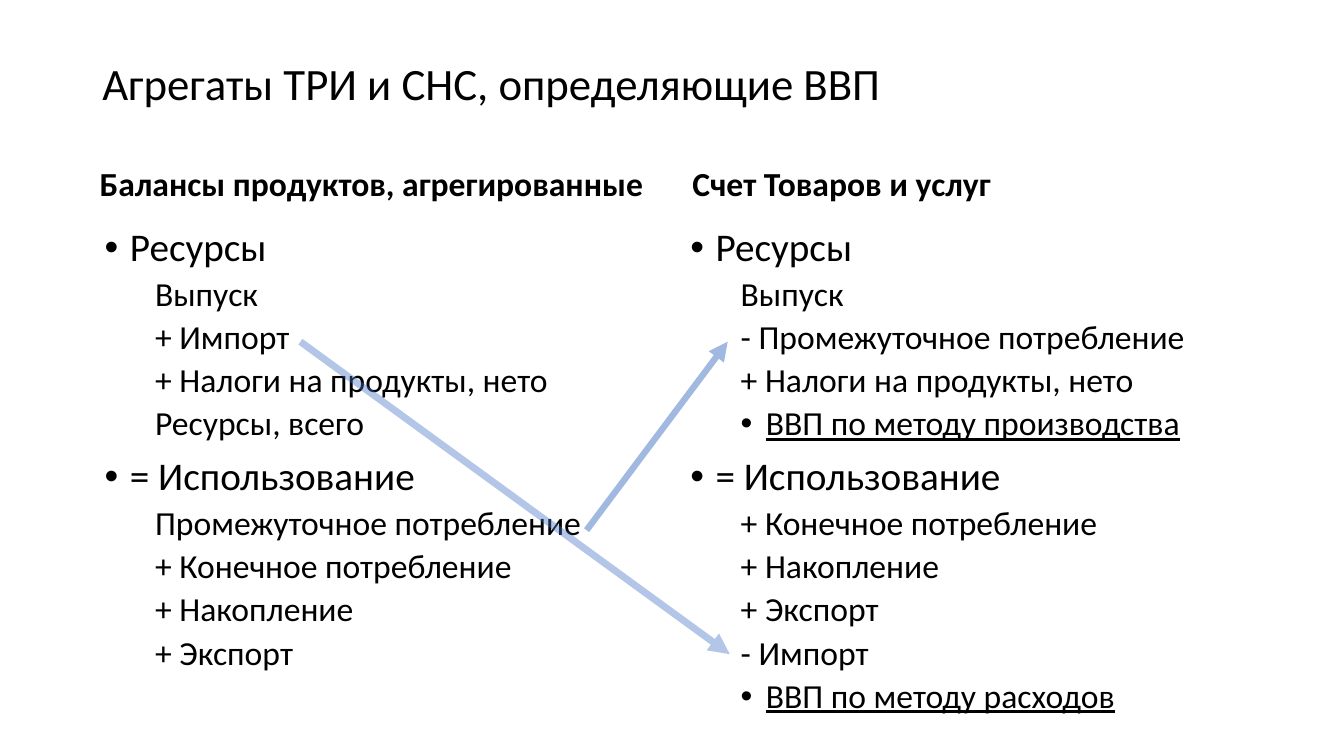
import pptx
import pptx.dml.color
import pptx.enum.shapes
import pptx.enum.text
import pptx.oxml.ns
import pptx.util
from lxml import etree

Pt = pptx.util.Pt
ANCHOR = pptx.enum.text.MSO_ANCHOR
qn = pptx.oxml.ns.qn


def color(hex_string):
    return pptx.dml.color.RGBColor.from_string(hex_string)


class SlideBuilder:
    font = "Calibri"
    text_color = "000000"
    arrow_color = "4472C4"
    indent = 18

    def __init__(self, slide):
        self.slide = slide

    def text_frame(self, left, top, width, height, anchor):
        box = self.slide.shapes.add_textbox(Pt(left), Pt(top), Pt(width), Pt(height))
        frame = box.text_frame
        frame.word_wrap = True
        frame.vertical_anchor = anchor
        return frame

    def add_text(self, paragraph, text, size, before=0, bold=False, underline=False):
        paragraph.line_spacing = 0.9
        paragraph.space_before = Pt(before)
        run = paragraph.add_run()
        run.text = text
        font = run.font
        font.name, font.size = self.font, Pt(size)
        font.bold, font.underline = bold, underline
        font.color.rgb = color(self.text_color)

    def bullet(self, paragraph, steps, visible):
        """Indent the text by a number of steps, with or without a hanging bullet."""
        properties = paragraph._p.get_or_add_pPr()
        properties.set("marL", str(Pt(self.indent * steps)))
        properties.set("indent", str(Pt(-self.indent if visible else 0)))
        if visible:
            etree.SubElement(properties, qn("a:buFont"), typeface="Arial")
            etree.SubElement(properties, qn("a:buChar"), char="•")
        else:
            etree.SubElement(properties, qn("a:buNone"))

    def title(self, text, *place):
        frame = self.text_frame(*place, ANCHOR.MIDDLE)
        self.add_text(frame.paragraphs[0], text, 32)

    def heading(self, text, *place):
        frame = self.text_frame(*place, ANCHOR.BOTTOM)
        self.add_text(frame.paragraphs[0], text, 24, before=10, bold=True)

    def account(self, sections, *place):
        """List each section with its items and, if there is one, its underlined total."""
        frame = self.text_frame(*place, ANCHOR.TOP)
        paragraph = frame.paragraphs[0]
        for number, (section, items, total) in enumerate(sections):
            if number:
                paragraph = frame.add_paragraph()
            self.add_text(paragraph, section, 28, before=10)
            self.bullet(paragraph, 1, True)
            for item in items:
                paragraph = frame.add_paragraph()
                paragraph.level = 1
                self.add_text(paragraph, item, 24, before=5)
                self.bullet(paragraph, 2, False)
            if total:
                paragraph = frame.add_paragraph()
                paragraph.level = 1
                self.add_text(paragraph, total, 24, before=5, underline=True)
                self.bullet(paragraph, 3, True)

    def arrow(self, start, end, width, opacity):
        connector = self.slide.shapes.add_connector(
            pptx.enum.shapes.MSO_CONNECTOR.STRAIGHT, *map(Pt, start + end))
        connector.line.width = Pt(width)
        connector.line.color.rgb = color(self.arrow_color)
        properties = connector._element.spPr
        fill = properties.find(".//" + qn("a:srgbClr"))
        etree.SubElement(fill, qn("a:alpha"), val=str(opacity * 1000))
        etree.SubElement(properties.find(qn("a:ln")), qn("a:tailEnd"), type="triangle")
        etree.SubElement(properties, qn("a:effectLst"))


def main():
    presentation = pptx.Presentation()
    presentation.slide_width, presentation.slide_height = Pt(960), Pt(540)
    builder = SlideBuilder(presentation.slides.add_slide(presentation.slide_layouts[6]))

    builder.title("Агрегаты ТРИ и СНС, определяющие ВВП", 66, 28.8, 828, 64.8)

    builder.heading("Балансы продуктов, агрегированные", 64.1, 103.7, 408.2, 45.4)
    builder.account([
        ("Ресурсы",
         ["Выпуск", "+ Импорт", "+ Налоги на продукты, нето", "Ресурсы, всего"], None),
        ("= Использование",
         ["Промежуточное потребление", "+ Конечное потребление", "+ Накопление", "+ Экспорт"],
         None),
    ], 67.7, 159.1, 406, 337)

    builder.heading("Счет Товаров и услуг", 487.4, 103.7, 406, 45.4)
    builder.account([
        ("Ресурсы",
         ["Выпуск", "- Промежуточное потребление", "+ Налоги на продукты, нето"],
         "ВВП по методу производства"),
        ("= Использование",
         ["+ Конечное потребление", "+ Накопление", "+ Экспорт", "- Импорт"],
         "ВВП по методу расходов"),
    ], 486, 159.1, 408, 363)

    builder.arrow((214.6, 244.1), (521.3, 467.3), 5, 40)
    builder.arrow((419, 378.7), (519.8, 244.1), 4.5, 50)

    presentation.save("out.pptx")


if __name__ == "__main__":
    main()
